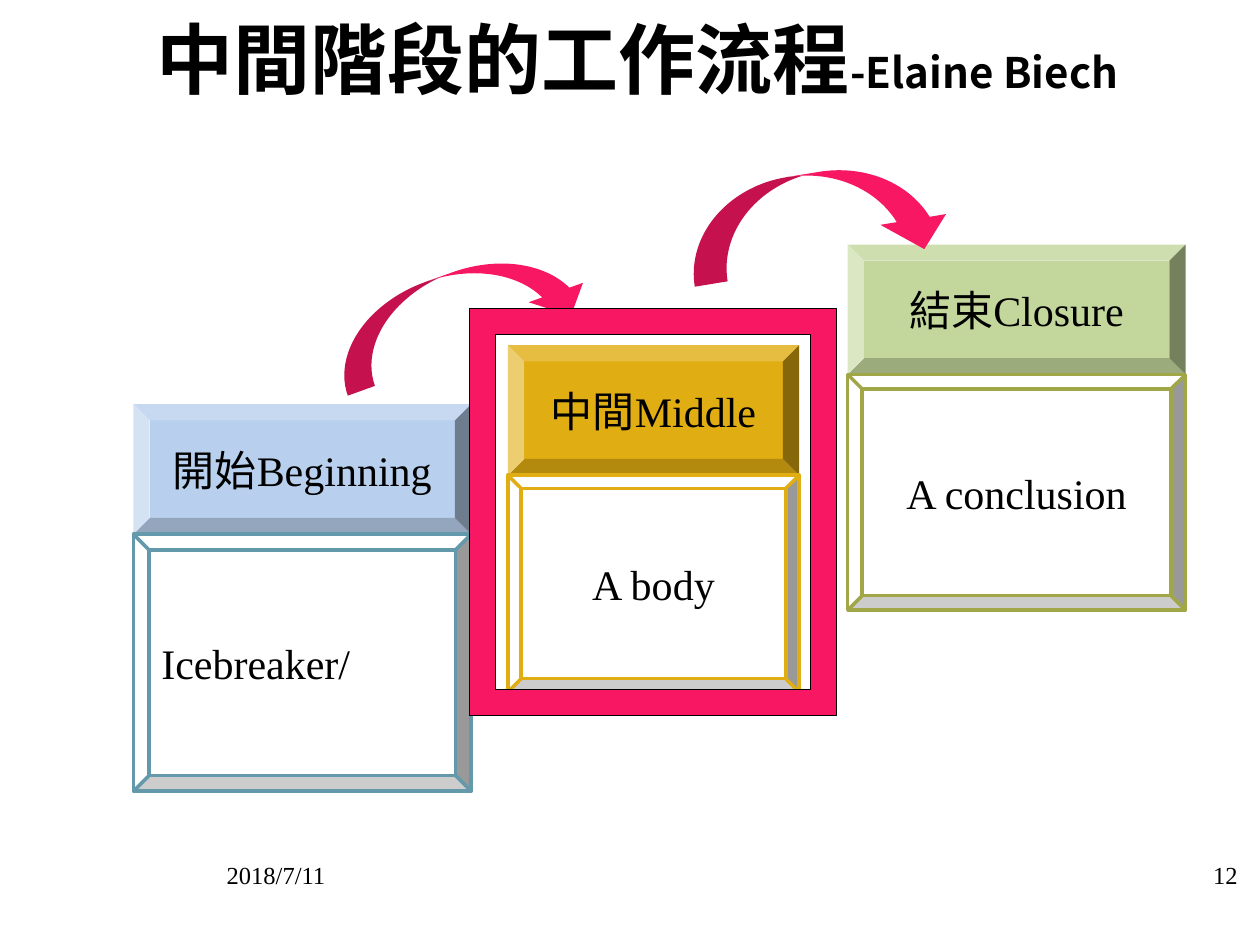
from lxml import etree
from pptx import Presentation
from pptx import util as u
from pptx.dml import color
from pptx.enum import shapes, text
from pptx.oxml import ns

LATIN, ASIAN = "Times New Roman", "Noto Sans CJK SC"
BLACK, WHITE, PINK = "000000", "FFFFFF", "F71762"
LEFT, CENTER, RIGHT = text.PP_ALIGN.LEFT, text.PP_ALIGN.CENTER, text.PP_ALIGN.RIGHT
HEADER_HEIGHT = 2.62


def rgb(hex_string):
    return color.RGBColor.from_string(hex_string)


class SlideBuilder:
    """Holds the style and the slide being filled; lengths are in cm."""

    def __init__(self, slide):
        self.slide = slide

    def style(self, font, size, name=LATIN, bold=False):
        font.size, font.name, font.bold = u.Pt(size), name, bold
        font.color.rgb = rgb(BLACK)
        etree.SubElement(font._rPr, ns.qn("a:ea"), typeface=ASIAN)

    def text_box(self, box, runs, align, name=LATIN, bold=False):
        """Add a text box; runs is a list of (words, size)."""
        frame = self.slide.shapes.add_textbox(*map(u.Cm, box)).text_frame
        frame.word_wrap = True
        frame.vertical_anchor = text.MSO_ANCHOR.MIDDLE
        paragraph = frame.paragraphs[0]
        paragraph.alignment = align
        for words, size in runs:
            run = paragraph.add_run()
            run.text = words
            self.style(run.font, size, name, bold)

    def shape(self, kind, box, fill, adjustments, line=None, width=2, rotation=0):
        shape = self.slide.shapes.add_shape(kind, *map(u.Cm, box))
        shape.shadow.inherit = False
        shape.rotation = rotation
        for index, value in enumerate(adjustments):
            shape.adjustments[index] = value
        shape.fill.solid()
        shape.fill.fore_color.rgb = rgb(fill)
        if line:
            shape.line.color.rgb = rgb(line)
            shape.line.width = u.Pt(width)
        else:
            shape.line.fill.background()
        return shape

    def bevel(self, box, words, fill, depth, line=None, align=CENTER, inset=0.13):
        shape = self.shape(shapes.MSO_SHAPE.BEVEL, box, fill, [depth], line)
        frame = shape.text_frame
        frame.word_wrap = True
        frame.vertical_anchor = text.MSO_ANCHOR.MIDDLE
        frame.margin_left = frame.margin_right = u.Cm(inset)
        frame.margin_top = frame.margin_bottom = u.Cm(0.13)
        paragraph = frame.paragraphs[0]
        paragraph.text = words
        paragraph.alignment = align
        self.style(paragraph.font, 24)

    def stage(self, left, top, width, body_height, heading, body, fill, line, **layout):
        """Add a coloured heading with a white body right below it."""
        self.bevel((left, top, width, HEADER_HEIGHT), heading, fill, 0.125)
        self.bevel((left, top + HEADER_HEIGHT, width, body_height), body,
                   WHITE, 0.061, line, **layout)

    def curved_arrow(self, box, rotation):
        self.shape(shapes.MSO_SHAPE.CURVED_DOWN_ARROW, box, PINK,
                   [0.357, 0.714, 0.333], rotation=rotation)

    def highlight(self, box):
        self.shape(shapes.MSO_SHAPE.FRAME, box, PINK, [0.071], BLACK, 0.75)


def main():
    presentation = Presentation()
    presentation.slide_width, presentation.slide_height = u.Cm(25.4), u.Cm(19.05)
    builder = SlideBuilder(presentation.slides.add_slide(presentation.slide_layouts[6]))

    builder.text_box((0.3, 0, 25.1, 2.31),
                     [("中間階段的工作流程", 44), ("-Elaine Biech", 24)],
                     CENTER, ASIAN, True)
    for left, words, align in ((4.32, "2018/7/11", LEFT), (19.28, "12", RIGHT)):
        builder.text_box((left, 17.12, 5.92, 1.02), [(words, 14)], align)

    builder.stage(2.69, 8.15, 6.81, 5.18, "開始Beginning", "Icebreaker/",
                  "B8D0ED", "6399AB", align=LEFT, inset=0.25)
    builder.stage(10.24, 6.96, 5.87, 4.37, "中間Middle", "A body", "E0AD12", "E0AD12")
    builder.stage(17.09, 4.93, 6.81, 4.75, "結束Closure", "A conclusion",
                  "C3D69B", "A1A646")

    builder.curved_arrow((6.58, 5.49, 5.36, 1.63), 340.3)
    builder.curved_arrow((13.82, 3.48, 5.36, 1.88), 350.7)
    builder.highlight((9.47, 6.22, 7.39, 8.2))

    presentation.save("out.pptx")


if __name__ == "__main__":
    main()
